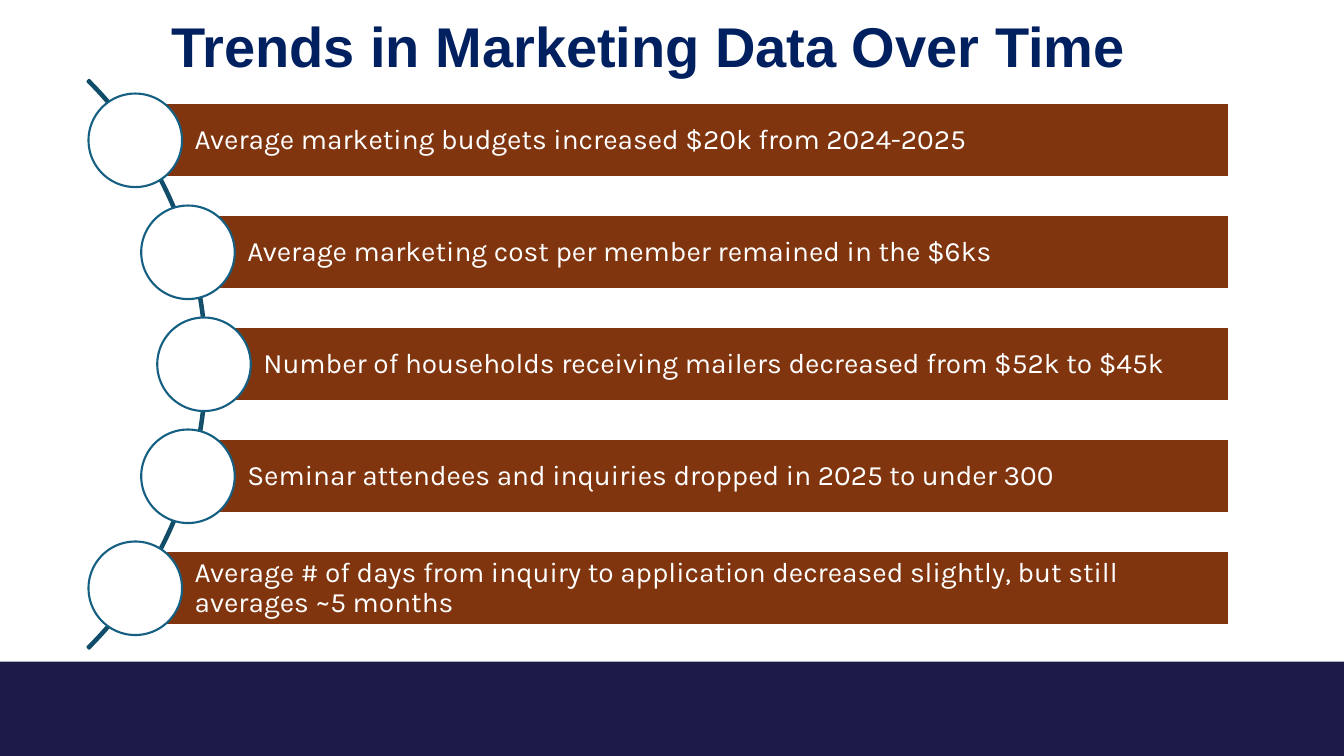
import math
import pptx
import pptx.dml.color
import pptx.enum.shapes
import pptx.enum.text
import pptx.util

Pt = pptx.util.Pt
MSO = pptx.enum.shapes.MSO_SHAPE
ALIGN = pptx.enum.text.PP_ALIGN
WIDTH, HEIGHT = 960, 540

TRENDS = [
    "Average marketing budgets increased $20k from 2024-2025",
    "Average marketing cost per member remained in the $6ks",
    "Number of households receiving mailers decreased from $52k to $45k",
    "Seminar attendees and inquiries dropped in 2025 to under 300",
    "Average # of days from inquiry to application decreased slightly, but still averages ~5 months",
]
TITLE_FONT = {"name": "Arial", "size": Pt(40), "bold": True}
TREND_FONT = {"name": "Karla", "size": Pt(20)}


def color(value):
    return pptx.dml.color.RGBColor.from_string(value)


def add_shape(s, kind, box, fill=None, line=None):
    sp = s.shapes.add_shape(kind, *map(Pt, box))
    sp.shadow.inherit = False
    if fill:
        sp.fill.solid()
        sp.fill.fore_color.rgb = color(fill)
    else:
        sp.fill.background()
    if line:
        sp.line.color.rgb = color(line)
        sp.line.width = Pt(1.5)
    else:
        sp.line.fill.background()
    return sp


def write(sp, text, font, font_color, align, insets):
    tf = sp.text_frame
    frame = {"word_wrap": True, "vertical_anchor": pptx.enum.text.MSO_ANCHOR.MIDDLE}
    sides = ("margin_left", "margin_top", "margin_right", "margin_bottom")
    frame.update(zip(sides, map(Pt, insets)))
    for name, value in frame.items():
        setattr(tf, name, value)
    p = tf.paragraphs[0]
    p.alignment = align
    p.line_spacing = 0.9
    r = p.add_run()
    r.text = text
    for name, value in font.items():
        setattr(r.font, name, value)
    r.font.color.rgb = color(font_color)


def add_title(s, box, text):
    sp = s.shapes.add_textbox(*map(Pt, box))
    write(sp, text, TITLE_FONT, "002060", ALIGN.CENTER, (7.2, 3.6, 7.2, 3.6))


def add_footer(s, box):
    add_shape(s, MSO.RECTANGLE, box, "1C1A46")


def add_trend(s, box, text, diameter):
    left, top, width, height = box
    bar = add_shape(s, MSO.RECTANGLE, box, "80350E", "FFFFFF")
    write(bar, text, TREND_FONT, "FFFFFF", ALIGN.LEFT, (42.4, 4.3, 4.3, 4.3))
    circle = (left - diameter / 2, top + (height - diameter) / 2, diameter, diameter)
    add_shape(s, MSO.OVAL, circle, "FFFFFF", "156082")


def add_trend_list(s, box, trends):
    left, top, width, height = box
    arc_size, radius, diameter, bar_height = 574.6, 285.2, 66.8, 53.3
    pitch = (height - diameter) / (len(trends) - 1)
    center_x = left + diameter / 2 - math.sqrt(radius ** 2 - (2 * pitch) ** 2)
    center_y = top + height / 2
    arc_box = (center_x - arc_size / 2, center_y - arc_size / 2, arc_size, arc_size)
    arc = add_shape(s, MSO.BLOCK_ARC, arc_box, line="114D68")
    for i, value in enumerate((189, 27, 0.003)):
        arc.adjustments[i] = value
    for i, text in enumerate(trends):
        offset = (i - (len(trends) - 1) / 2) * pitch
        x = center_x + math.sqrt(radius ** 2 - offset ** 2)
        bar = (x, center_y + offset - bar_height / 2, left + width - x, bar_height)
        add_trend(s, bar, text, diameter)


def main():
    prs = pptx.Presentation()
    prs.slide_width, prs.slide_height = Pt(WIDTH), Pt(HEIGHT)
    s = prs.slides.add_slide(prs.slide_layouts[6])
    add_footer(s, (0, 472.5, WIDTH, 67.5))
    add_title(s, (49, -17.3, 828, 104.4), "Trends in Marketing Data Over Time")
    add_trend_list(s, (63.2, 66.8, 815, 386.8), TRENDS)
    prs.save("out.pptx")


if __name__ == "__main__":
    main()
